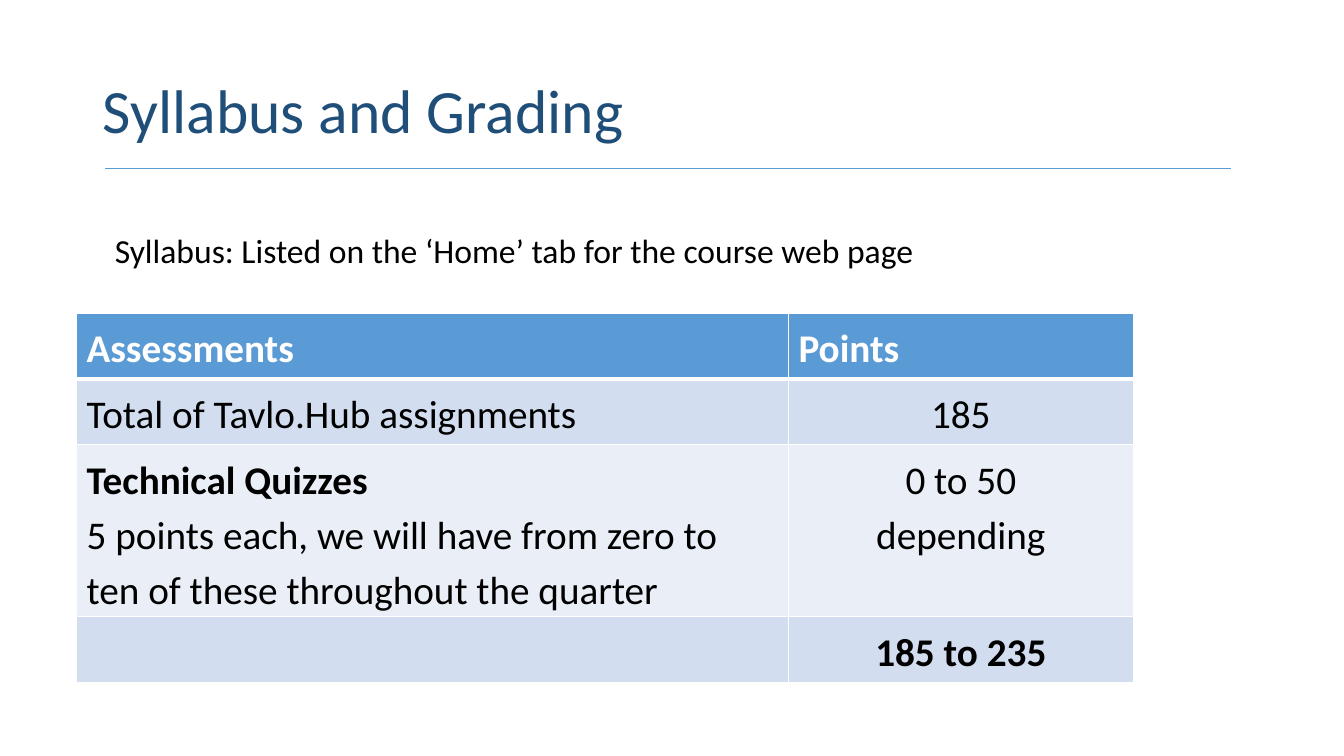
from lxml.etree import SubElement
from pptx import Presentation
from pptx.dml.color import RGBColor
from pptx.enum.shapes import MSO_CONNECTOR
from pptx.enum.text import MSO_ANCHOR, MSO_AUTO_SIZE, PP_ALIGN
from pptx.oxml.ns import qn
from pptx.util import Inches, Pt

TITLE = "Syllabus and Grading"
NOTE = "Syllabus: Listed on the ‘Home’ tab for the course web page"
ROWS = [
    ([("Assessments", True)], [("Points", True)]),
    ([("Total of Tavlo.Hub assignments", False)], [("185", False)]),
    ([("Technical Quizzes", True),
      ("5 points each, we will have from zero to ten of these throughout the quarter", False)],
     [("0 to 50", False), ("depending", False)]),
    ([], [("185 to 235", True)]),
]
COLORS = {"title": "1F4E79", "accent": "5B9BD5", "text": "000000",
          "white": "FFFFFF", "odd": "D2DEEF", "even": "EAEFF7"}
FONT = "Calibri"
COL_WIDTHS = (7.06, 3.42)
ROW_HEIGHT = 0.65
ROW_UNITS = (1, 1, 2.4, 1)


def rgb(name):
    return RGBColor.from_string(COLORS[name])


def add_run(p, text, size, color, bold=False):
    r = p.add_run()
    r.text = text
    r.font.name, r.font.size, r.font.bold = FONT, Pt(size), bold
    r.font.color.rgb = rgb(color)


def add_borders(cell, bottom):
    tc_pr = cell._tc.get_or_add_tcPr()
    for side, width in (("L", 1), ("R", 1), ("T", 1), ("B", bottom)):
        ln = SubElement(tc_pr, qn(f"a:ln{side}"), w=str(Pt(width)))
        fill = SubElement(ln, qn("a:solidFill"))
        SubElement(fill, qn("a:srgbClr"), val=COLORS["white"])


def fill_cell(cell, lines, row, col):
    header = row == 0
    add_borders(cell, 3 if header else 1)
    cell.fill.solid()
    cell.fill.fore_color.rgb = rgb("accent" if header else "odd" if row % 2 else "even")
    p = cell.text_frame.paragraphs[0]
    p.line_spacing = 1.15
    p.alignment = PP_ALIGN.JUSTIFY if header else PP_ALIGN.CENTER if col else PP_ALIGN.LEFT
    for i, (text, bold) in enumerate(lines):
        if i:
            p.add_line_break()
        add_run(p, text, 28, "white" if header else "text", bold)


def main():
    prs = Presentation()
    prs.slide_width, prs.slide_height = Inches(13.33), Inches(7.5)
    s = prs.slides.add_slide(prs.slide_layouts[5])

    sp = s.shapes.title
    sp.left, sp.top, sp.width, sp.height = map(Inches, (0.92, 0.4, 11.5, 1.45))
    tf = sp.text_frame
    tf.auto_size = MSO_AUTO_SIZE.NONE
    tf.vertical_anchor = MSO_ANCHOR.MIDDLE
    p = tf.paragraphs[0]
    p.alignment, p.line_spacing = PP_ALIGN.LEFT, 0.9
    add_run(p, TITLE, 44, "title")

    sp = s.shapes.add_textbox(*map(Inches, (1.04, 2.23, 8.81, 1.03)))
    tf = sp.text_frame
    tf.word_wrap = True
    p = tf.paragraphs[0]
    p.space_before = Pt(6)
    add_run(p, NOTE, 24, "text")

    rule = s.shapes.add_connector(MSO_CONNECTOR.STRAIGHT, *map(Inches, (1.04, 1.67, 12.21, 1.67)))
    rule.line.color.rgb = rgb("accent")
    rule.line.width = Pt(0.5)
    SubElement(rule._element.spPr, qn("a:effectLst"))

    table = s.shapes.add_table(
        len(ROWS), len(COL_WIDTHS), Inches(0.76), Inches(3.11),
        Inches(sum(COL_WIDTHS)), Inches(ROW_HEIGHT * sum(ROW_UNITS))).table
    for column, width in zip(table.columns, COL_WIDTHS):
        column.width = Inches(width)
    for i, (row, units) in enumerate(zip(ROWS, ROW_UNITS)):
        table.rows[i].height = Inches(ROW_HEIGHT * units)
        for j, lines in enumerate(row):
            fill_cell(table.cell(i, j), lines, i, j)

    prs.save("out.pptx")


if __name__ == "__main__":
    main()
